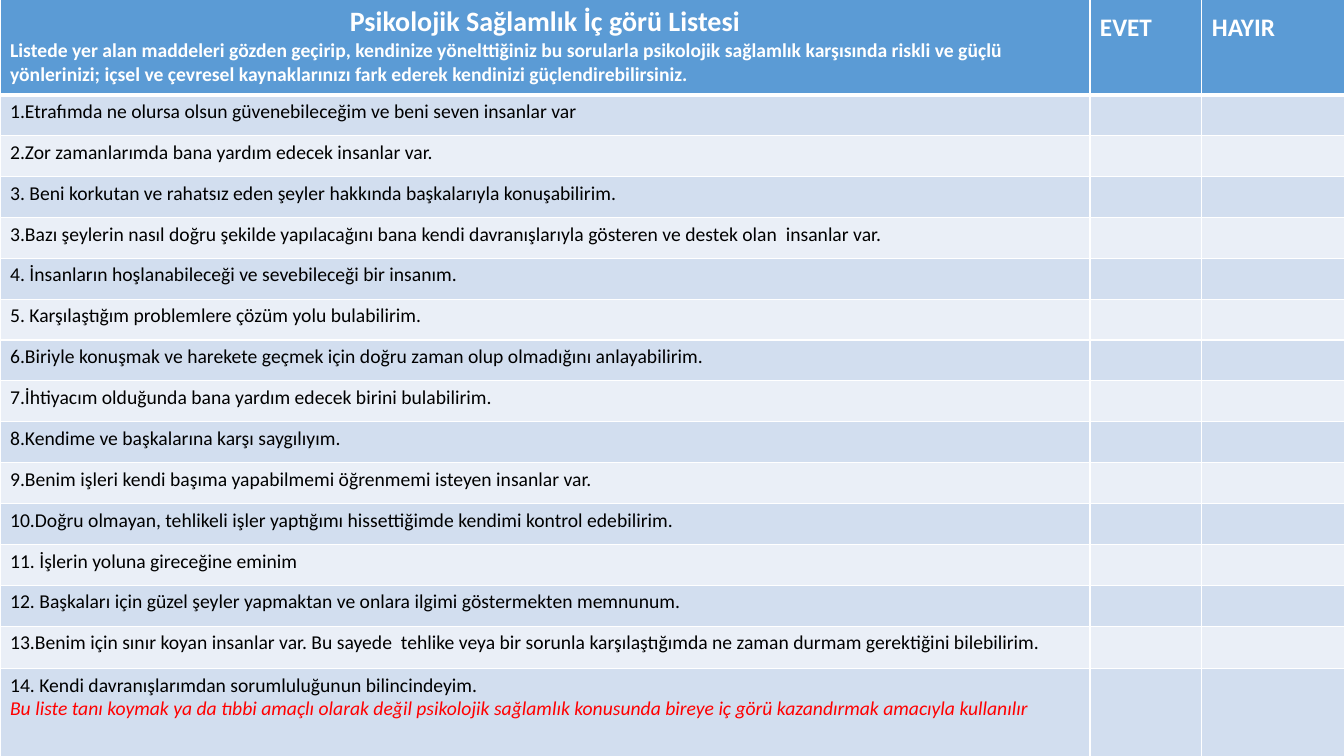
"""Builds a one-slide psychological resilience checklist with yes and no columns."""
from lxml import etree
from pptx import Presentation
from pptx import util as u
from pptx.dml.color import RGBColor
from pptx.enum import text
from pptx.oxml import ns

WHITE = RGBColor(0xFF, 0xFF, 0xFF)
BLACK = RGBColor(0x00, 0x00, 0x00)
RED = RGBColor(0xFF, 0x00, 0x00)
HEADER_BLUE = RGBColor(0x5B, 0x9B, 0xD5)
BANDS = (RGBColor(0xD2, 0xDE, 0xEF), RGBColor(0xEA, 0xEF, 0xF7))

FONT = "Calibri"
TITLE = "Psikolojik Sağlamlık İç görü Listesi"
INTRO = (
    "Listede yer alan maddeleri gözden geçirip, kendinize yönelttiğiniz bu sorularla "
    "psikolojik sağlamlık karşısında riskli ve güçlü yönlerinizi; içsel ve çevresel "
    "kaynaklarınızı fark ederek kendinizi güçlendirebilirsiniz."
)
ANSWERS = ("EVET", "HAYIR")
STATEMENTS = [
    "1.Etrafımda ne olursa olsun güvenebileceğim ve beni seven insanlar var",
    "2.Zor zamanlarımda bana yardım edecek insanlar var.",
    "3. Beni korkutan ve rahatsız eden şeyler hakkında başkalarıyla konuşabilirim.",
    "3.Bazı şeylerin nasıl doğru şekilde yapılacağını bana kendi davranışlarıyla gösteren ve destek olan  insanlar var.",
    "4. İnsanların hoşlanabileceği ve sevebileceği bir insanım.",
    "5. Karşılaştığım problemlere çözüm yolu bulabilirim.",
    "6.Biriyle konuşmak ve harekete geçmek için doğru zaman olup olmadığını anlayabilirim.",
    "7.İhtiyacım olduğunda bana yardım edecek birini bulabilirim.",
    "8.Kendime ve başkalarına karşı saygılıyım.",
    "9.Benim işleri kendi başıma yapabilmemi öğrenmemi isteyen insanlar var.",
    "10.Doğru olmayan, tehlikeli işler yaptığımı hissettiğimde kendimi kontrol edebilirim.",
    "11. İşlerin yoluna gireceğine eminim",
    "12. Başkaları için güzel şeyler yapmaktan ve onlara ilgimi göstermekten memnunum.",
    "13.Benim için sınır koyan insanlar var. Bu sayede  tehlike veya bir sorunla karşılaştığımda ne zaman durmam gerektiğini bilebilirim.",
    "14. Kendi davranışlarımdan sorumluluğunun bilincindeyim.",
]
DISCLAIMER = (
    "Bu liste tanı koymak ya da tıbbi amaçlı olarak değil psikolojik sağlamlık konusunda "
    "bireye iç görü kazandırmak amacıyla kullanılır"
)

TABLE_TOP = -0.24
COLUMN_WIDTHS = (10.81, 1.11, 1.42)
ROW_HEIGHTS = [1.18] + [0.39] * 12 + [0.4, 0.42, 1.2]
INTRO_INSET = 0.29
ANSWER_INSET = 0.36


def write(paragraph, words, size, color, bold=False, italic=False):
    run = paragraph.add_run()
    run.text = words
    font = run.font
    font.name, font.size, font.bold, font.italic = FONT, u.Pt(size), bold, italic
    font.color.rgb = color


def style_cell(cell, fill, top=1, bottom=1):
    cell.fill.solid()
    cell.fill.fore_color.rgb = fill
    properties = cell._tc.get_or_add_tcPr()
    edges = (("L", 1), ("R", 1), ("T", top), ("B", bottom))
    for place, (side, width) in enumerate(edges):
        edge = etree.Element(ns.qn(f"a:ln{side}"), w=str(u.Pt(width)))
        solid = etree.SubElement(edge, ns.qn("a:solidFill"))
        etree.SubElement(solid, ns.qn("a:srgbClr"), val=str(WHITE))
        properties.insert(place, edge)


def fill_header(table):
    for cell in table.rows[0].cells:
        style_cell(cell, HEADER_BLUE, bottom=3)
    heading = table.cell(0, 0)
    heading.margin_top = u.Inches(INTRO_INSET)
    title = heading.text_frame.paragraphs[0]
    title.alignment = text.PP_ALIGN.CENTER
    write(title, TITLE, 20, WHITE, bold=True)
    write(heading.text_frame.add_paragraph(), INTRO, 14, WHITE, bold=True)
    for column, answer in enumerate(ANSWERS, 1):
        cell = table.cell(0, column)
        cell.margin_top = u.Inches(ANSWER_INSET)
        write(cell.text_frame.paragraphs[0], answer, 18, WHITE, bold=True)


def fill_statements(table):
    for row, statement in enumerate(STATEMENTS, 1):
        for cell in table.rows[row].cells:
            style_cell(cell, BANDS[(row - 1) % 2], top=3 if row == 1 else 1)
        write(table.cell(row, 0).text_frame.paragraphs[0], statement, 14, BLACK)
    closing = table.cell(len(STATEMENTS), 0).text_frame.add_paragraph()
    write(closing, DISCLAIMER, 14, RED, italic=True)


def main():
    deck = Presentation()
    deck.slide_width, deck.slide_height = u.Inches(13.33), u.Inches(7.5)
    slide = deck.slides.add_slide(deck.slide_layouts[6])
    checklist = slide.shapes.add_table(
        len(ROW_HEIGHTS), len(COLUMN_WIDTHS), u.Inches(0), u.Inches(TABLE_TOP),
        u.Inches(sum(COLUMN_WIDTHS)), u.Inches(sum(ROW_HEIGHTS)),
    ).table
    checklist.first_row = checklist.horz_banding = False
    for column, width in zip(checklist.columns, COLUMN_WIDTHS):
        column.width = u.Inches(width)
    for row, height in zip(checklist.rows, ROW_HEIGHTS):
        row.height = u.Inches(height)
    fill_header(checklist)
    fill_statements(checklist)
    deck.save("out.pptx")


if __name__ == "__main__":
    main()
